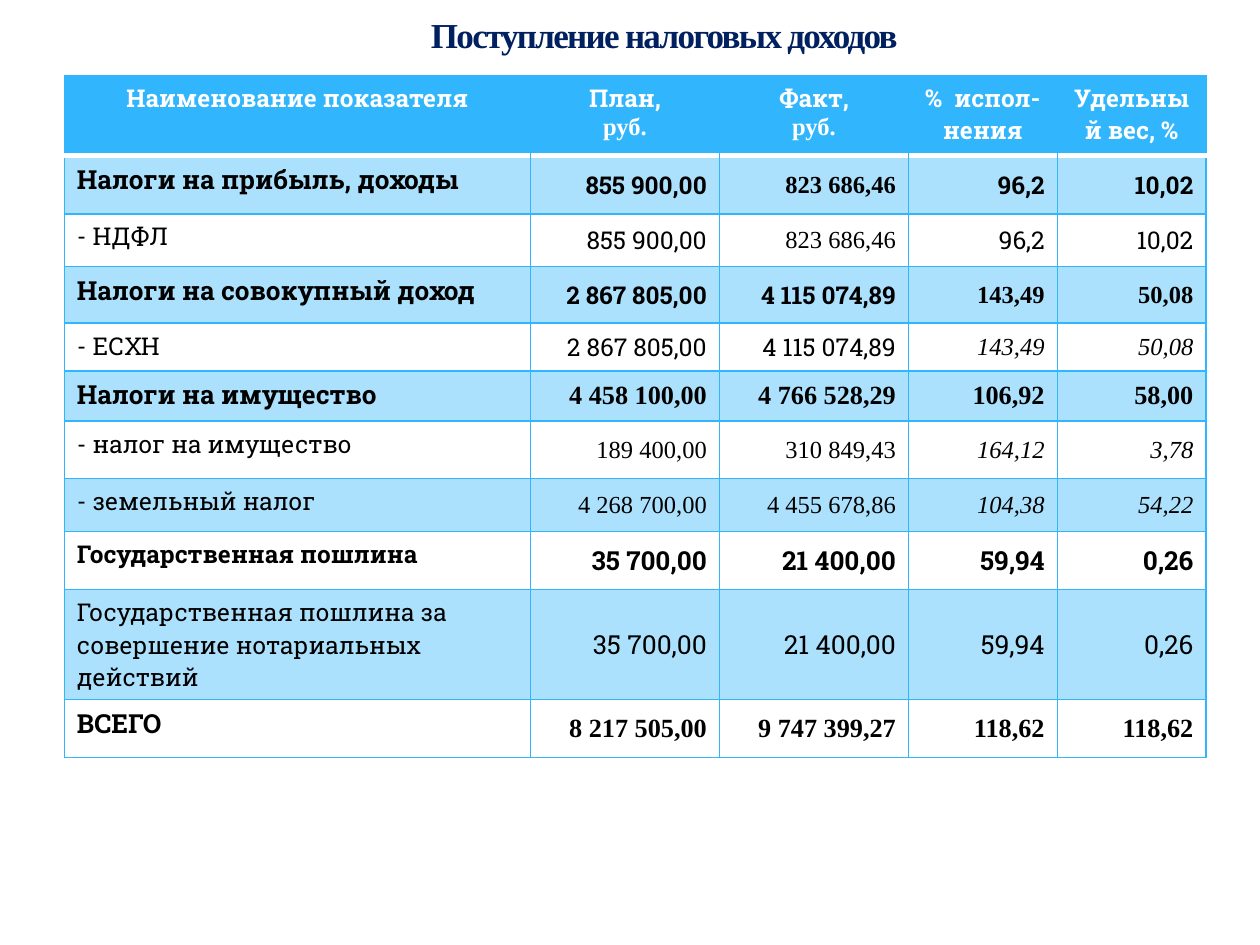
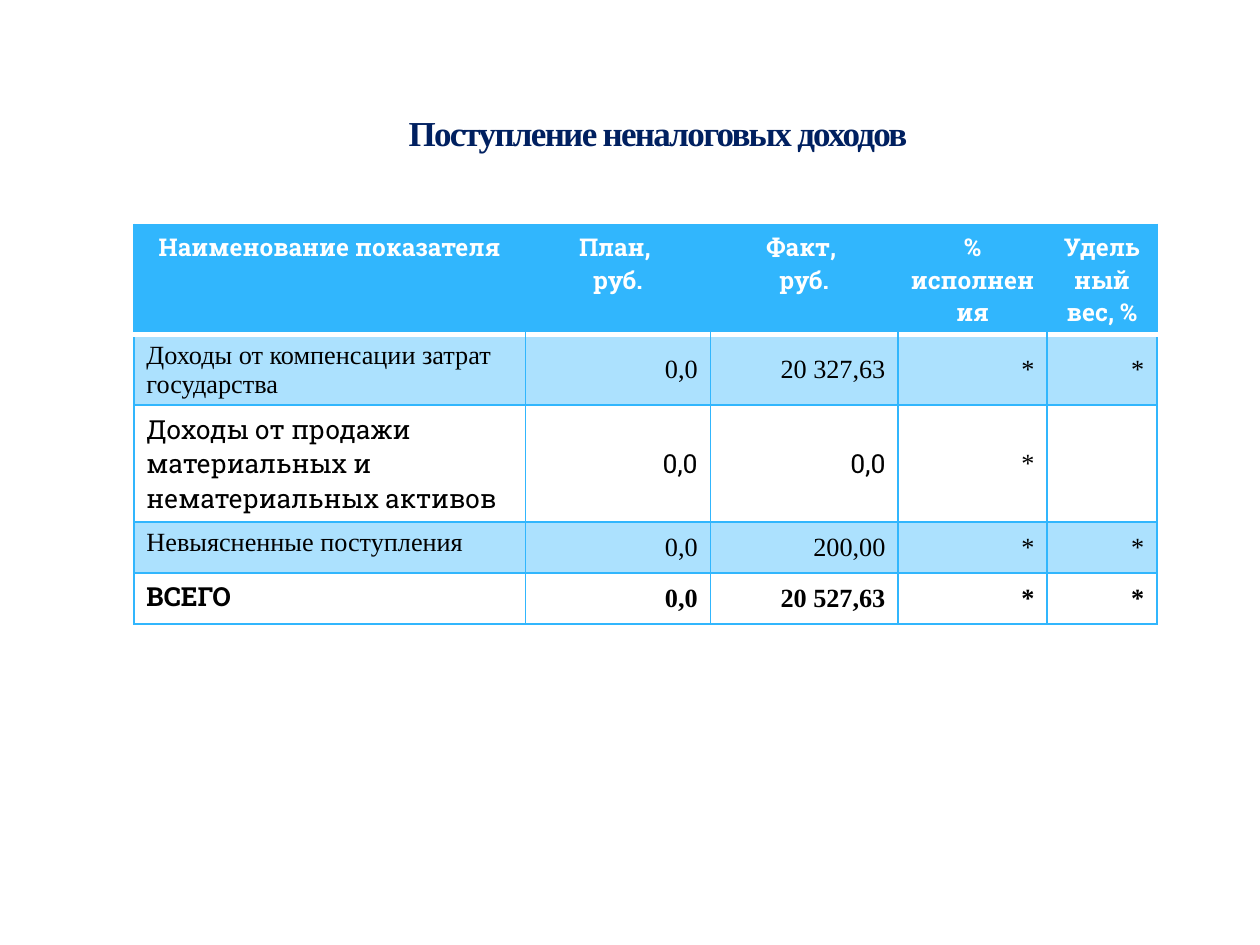
from lxml.etree import SubElement
from pptx import Presentation
from pptx.dml.color import RGBColor
from pptx.enum.text import MSO_ANCHOR, MSO_AUTO_SIZE, PP_ALIGN
from pptx.oxml.ns import qn
from pptx.util import Pt

BLUE, NAVY, WHITE, BLACK, PALE = "31B6FD", "002060", "FFFFFF", "000000", "AFCCDE"
FONTS = {"R": "Roboto Slab", "T": "Times New Roman"}
NO_STYLE = "{2D5ABB26-0587-4C30-8999-92F81FD0307C}"

# A cell style is a font letter, a size and the flags b (bold) and i (italic).
TAX_HEADER = ["Наименование показателя", "План,\nруб.", "Факт,\nруб.",
              "%  испол-нения", "Удельный вес, %"]
TAX_ROWS = [
    ("R15b R14b T14b R14b R14b", "Налоги на прибыль, доходы|855 900,00|823 686,46|96,2|10,02"),
    ("R14 R14 T14 R14 R14", "- НДФЛ|855 900,00|823 686,46|96,2|10,02"),
    ("R15b R14b R14b T14b T14b",
     "Налоги на совокупный доход|2 867 805,00|4 115 074,89|143,49|50,08"),
    ("R14 R14 R14 T14i T14i", "- ЕСХН|2 867 805,00|4 115 074,89|143,49|50,08"),
    ("R15b T15b T15b T15b T15b", "Налоги на имущество|4 458 100,00|4 766 528,29|106,92|58,00"),
    ("R14 T14 T14 T14i T14i", "- налог на имущество|189 400,00|310 849,43|164,12|3,78"),
    ("R14 T14 T14 T14i T14i", "- земельный налог|4 268 700,00|4 455 678,86|104,38|54,22"),
    ("R14b R15b R15b R15b R15b", "Государственная пошлина|35 700,00|21 400,00|59,94|0,26"),
    ("R14 R15 R15 R15 R15",
     "Государственная пошлина за совершение нотариальных действий|35 700,00|21 400,00|59,94|0,26"),
    ("R15b T15b T15b T15b T15b", "ВСЕГО|8 217 505,00|9 747 399,27|118,62|118,62"),
]
NON_TAX_HEADER = ["Наименование показателя", "План, \nруб.", "Факт, \nруб.",
                  "% исполнения", "Удельный вес, %"]
NON_TAX_ROWS = [
    ("T15 T15 T15 T15 T15", "Доходы от компенсации затрат государства|0,0|20 327,63|*|*"),
    ("R15 R15 R15 T15 T15",
     "Доходы от продажи материальных и нематериальных активов|0,0|0,0|*|"),
    ("T15 T15 T15 T15 T15", "Невыясненные поступления|0,0|200,00|*|*"),
    ("R15b T15b T15b T15b T15b", "ВСЕГО|0,0|20 527,63|*|*"),
]


def rgb(color):
    return RGBColor.from_string(color)


def solid_fill(parent, color, alpha=None):
    clr = SubElement(SubElement(parent, qn("a:solidFill")), qn("a:srgbClr"), val=color)
    if alpha:
        SubElement(clr, qn("a:alpha"), val=str(alpha * 1000))


class Deck:
    def __init__(self):
        self.prs = Presentation()
        self.prs.slide_width, self.prs.slide_height = Pt(720), Pt(540)
        self.s = None

    def slide(self, title, box):
        self.s = self.prs.slides.add_slide(self.prs.slide_layouts[5])
        sp = self.s.shapes.title
        for name, value in zip(("left", "top", "width", "height"), box):
            setattr(sp, name, Pt(value))
        tf = sp.text_frame
        tf.auto_size, tf.vertical_anchor = MSO_AUTO_SIZE.NONE, MSO_ANCHOR.MIDDLE
        r = self.run(tf.paragraphs[0], title, "T20b", NAVY, PP_ALIGN.CENTER)
        rPr = r.font._element
        rPr.set("spc", "-100")
        ln = rPr.makeelement(qn("a:ln"), {"w": str(Pt(0.25))})
        rPr.insert(0, ln)
        solid_fill(ln, PALE, 25)

    def run(self, p, text, style, color, align):
        p.alignment = align
        r = p.add_run()
        r.text = text
        font = {"name": FONTS[style[0]], "size": Pt(int(style[1:3])),
                "bold": "b" in style, "italic": "i" in style}
        for name, value in font.items():
            setattr(r.font, name, value)
        r.font.color.rgb = rgb(color)
        return r

    def borders(self, cell, **sides):
        """Draw sides L, R, T, B given as (color, width), or None for no line."""
        tcPr = cell._tc.get_or_add_tcPr()
        for side in "LRTB":
            color, width = sides[side] or (None, 0)
            ln = SubElement(tcPr, qn("a:ln" + side), w=str(Pt(width)))
            if color:
                solid_fill(ln, color)
            else:
                SubElement(ln, qn("a:noFill"))

    def header_cell(self, cell, text, unit_style, first, last):
        thin = (BLUE, 1)
        self.borders(cell, L=thin if first else None, R=thin if last else None,
                     T=thin, B=(WHITE, 3))
        cell.fill.solid()
        cell.fill.fore_color.rgb = rgb(BLUE)
        tf = cell.text_frame
        for i, line in enumerate(text.split("\n")):
            p = tf.add_paragraph() if i else tf.paragraphs[0]
            self.run(p, line, unit_style if i else "R14b", WHITE, PP_ALIGN.CENTER)

    def body_cell(self, cell, text, style, row, is_name):
        thin = (BLUE, 1)
        self.borders(cell, L=thin, R=thin, T=(WHITE, 3) if row == 1 else thin, B=thin)
        if row % 2:
            solid_fill(cell._tc.get_or_add_tcPr(), BLUE, 40)
        else:
            cell.fill.background()
        if not is_name:
            cell.vertical_anchor = MSO_ANCHOR.MIDDLE
        if text:
            self.run(cell.text_frame.paragraphs[0], text, style, BLACK,
                     PP_ALIGN.LEFT if is_name else PP_ALIGN.RIGHT)

    def table(self, left, top, widths, heights, header, rows, unit_style):
        gf = self.s.shapes.add_table(len(heights), len(widths), Pt(left), Pt(top),
                                     Pt(sum(widths)), Pt(sum(heights)))
        table = gf.table
        table.first_row = table.horz_banding = False
        next(gf._element.iter(qn("a:tableStyleId"))).text = NO_STYLE
        for column, width in zip(table.columns, widths):
            column.width = Pt(width)
        for row, height in zip(table.rows, heights):
            row.height = Pt(height)
        for j, text in enumerate(header):
            self.header_cell(table.cell(0, j), text, unit_style, j == 0, j == len(header) - 1)
        for i, (styles, texts) in enumerate(rows, 1):
            for j, (style, text) in enumerate(zip(styles.split(), texts.split("|"))):
                self.body_cell(table.cell(i, j), text, style, i, j == 0)


def main():
    deck = Deck()
    deck.slide("Поступление налоговых доходов", (116, 0, 527, 39.6))
    deck.table(36.8, 43, [266.4, 108, 108, 85, 85],
               [46, 33.2, 30.2, 32.2, 27.4, 28.6, 33, 30.3, 33.1, 46, 33.1],
               TAX_HEADER, TAX_ROWS, "T14b")
    deck.slide("Поступление неналоговых доходов", (99.4, 49, 553, 53.3))
    deck.table(76.5, 128.2, [223.8, 105.6, 107.3, 85.2, 62.7], [29.2] * 5,
               NON_TAX_HEADER, NON_TAX_ROWS, "R14b")
    deck.prs.save("out.pptx")


if __name__ == "__main__":
    main()
